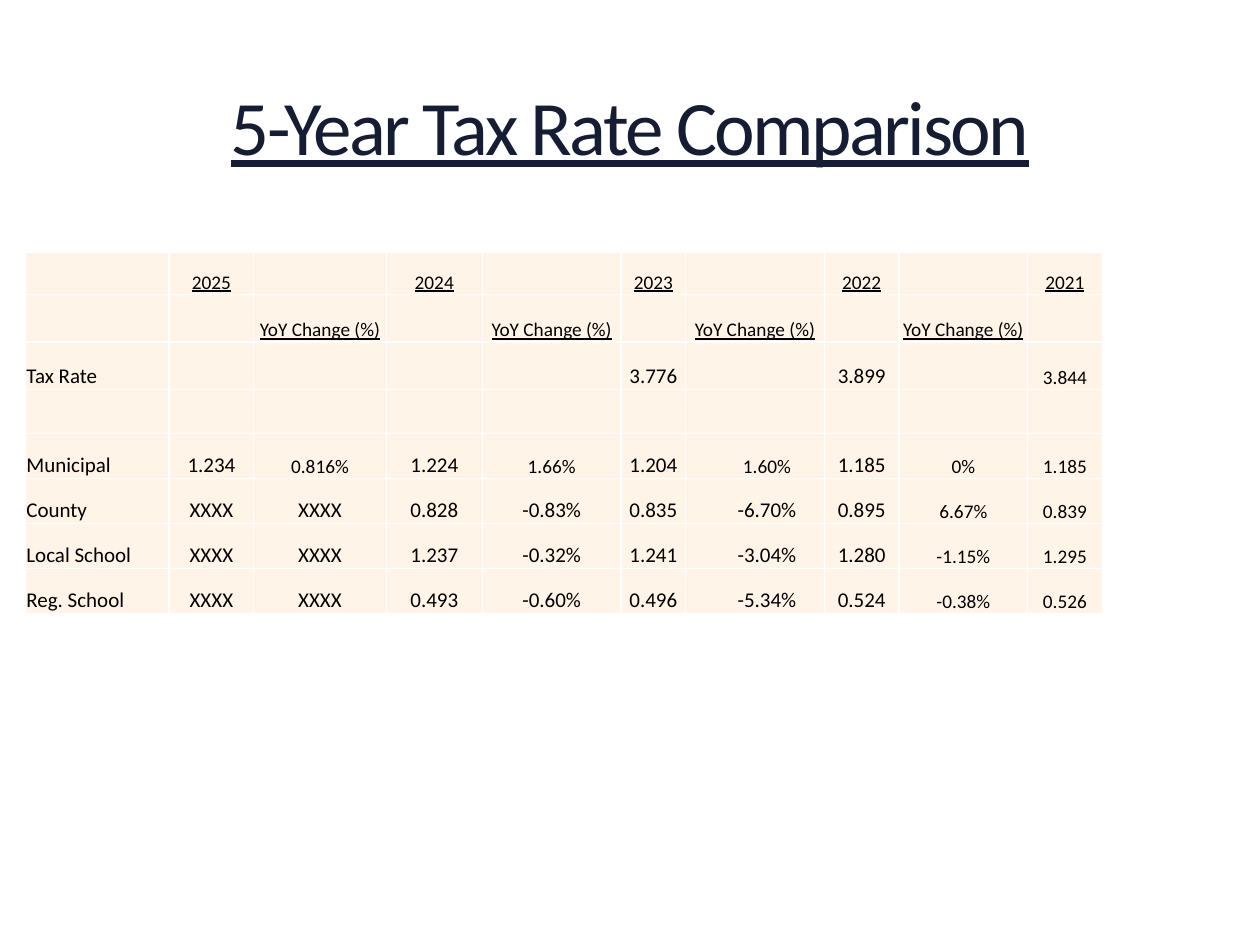
from lxml.etree import SubElement
from pptx import Presentation
from pptx.dml.color import RGBColor
from pptx.enum.text import MSO_ANCHOR, MSO_AUTO_SIZE, PP_ALIGN
from pptx.oxml.ns import qn
from pptx.util import Inches, Pt

FONT = "Calibri"
NAVY, BLACK, CREAM, WHITE = "161D32", "000000", "FFF4E7", "FFFFFF"
HEADER_ROWS = 2
SHIFTED_COLUMN = 6
COLUMN_WIDTHS = [1.14, 0.67, 1.05, 0.76, 1.1, 0.51, 1.1, 0.59, 1.02, 0.59]
ROW_HEIGHTS = [0.34, 0.38, 0.38, 0.35] + [0.36] * 4
TAX_RATES = [
    ["", "2025", "", "2024", "", "2023", "", "2022", "", "2021"],
    ["", ""] + ["YoY Change (%)", ""] * 4,
    ["Tax Rate", "", "", "", "", "3.776", "", "3.899", "", "3.844"],
    [""] * 10,
    ["Municipal", "1.234", "0.816%", "1.224", "1.66%", "1.204", "1.60%", "1.185", "0%", "1.185"],
    ["County", "XXXX", "XXXX", "0.828", "-0.83%", "0.835", "-6.70%", "0.895", "6.67%", "0.839"],
    ["Local School", "XXXX", "XXXX", "1.237", "-0.32%", "1.241", "-3.04%", "1.280", "-1.15%", "1.295"],
    ["Reg. School", "XXXX", "XXXX", "0.493", "-0.60%", "0.496", "-5.34%", "0.524", "-0.38%", "0.526"],
]


def color(hex_string):
    """Return the colour for a hex string."""
    return RGBColor.from_string(hex_string)


def style_run(run, size, hex_string, underline):
    """Set the font, size, colour and underline of a run."""
    run.font.name = FONT
    run.font.size = Pt(size)
    run.font.color.rgb = color(hex_string)
    run.font.underline = underline


def add_borders(cell, hex_string, points):
    """Draw a solid line on each side of a cell."""
    properties = cell._tc.get_or_add_tcPr()
    for side in ("lnL", "lnR", "lnT", "lnB"):
        line = SubElement(properties, qn(f"a:{side}"), w=str(Pt(points)))
        fill = SubElement(line, qn("a:solidFill"))
        SubElement(fill, qn("a:srgbClr"), val=hex_string)


def text_size(row, column):
    """Return the text size for a position in the tax table."""
    municipal_change = TAX_RATES[row][0] == "Municipal" and column in (2, 4, 6)
    return 11 if row < HEADER_ROWS or column >= 8 or municipal_change else 12


def fill_cell(cell, row, column):
    """Format one cell of the tax table and write its value."""
    add_borders(cell, WHITE, 1)
    cell.fill.solid()
    cell.fill.fore_color.rgb = color(CREAM)
    cell.vertical_anchor = MSO_ANCHOR.BOTTOM
    shifted = column == SHIFTED_COLUMN and row >= HEADER_ROWS
    cell.margin_left = Inches(0.2 if shifted else 0.01)
    cell.margin_right = cell.margin_top = Inches(0.01)
    cell.margin_bottom = 0
    cell.text_frame.text = TAX_RATES[row][column]
    paragraph = cell.text_frame.paragraphs[0]
    paragraph.alignment = PP_ALIGN.CENTER if column else PP_ALIGN.LEFT
    for run in paragraph.runs:
        style_run(run, text_size(row, column), BLACK, row < HEADER_ROWS)


def place_title(slide, left, top, width, height):
    """Place the underlined slide title in the given box."""
    title = slide.shapes.title
    title.left, title.top, title.width, title.height = map(Inches, (left, top, width, height))
    frame = title.text_frame
    frame.text = "5-Year Tax Rate Comparison\v"
    frame.word_wrap = True
    frame.auto_size = MSO_AUTO_SIZE.NONE
    frame.vertical_anchor = MSO_ANCHOR.MIDDLE
    frame.margin_left = frame.margin_right = frame.margin_top = frame.margin_bottom = 0
    paragraph = frame.paragraphs[0]
    paragraph.alignment = PP_ALIGN.CENTER
    paragraph.line_spacing = 0.9
    for run in paragraph.runs:
        style_run(run, 44, NAVY, True)
        run.font._element.set("spc", "-150")


def place_tax_table(slide, left, top, width, height):
    """Place the tax rate table in the given box."""
    frame = slide.shapes.add_table(len(ROW_HEIGHTS), len(COLUMN_WIDTHS),
                                   *map(Inches, (left, top, width, height)))
    table = frame.table
    for column, share in zip(table.columns, COLUMN_WIDTHS):
        column.width = Inches(width * share / sum(COLUMN_WIDTHS))
    for row, share in zip(table.rows, ROW_HEIGHTS):
        row.height = Inches(height * share / sum(ROW_HEIGHTS))
    for row in range(len(ROW_HEIGHTS)):
        for column in range(len(COLUMN_WIDTHS)):
            fill_cell(table.cell(row, column), row, column)


def main():
    """Build and save the tax rate slide."""
    presentation = Presentation()
    presentation.slide_width, presentation.slide_height = Inches(10), Inches(7.5)
    slide = presentation.slides.add_slide(presentation.slide_layouts[0])
    subtitle = slide.placeholders[1].element
    subtitle.getparent().remove(subtitle)
    place_title(slide, 1.15, 1.07, 7.7, 0.67)
    place_tax_table(slide, 0.2, 2, 8.55, 2.87)
    presentation.save("out.pptx")


if __name__ == "__main__":
    main()
